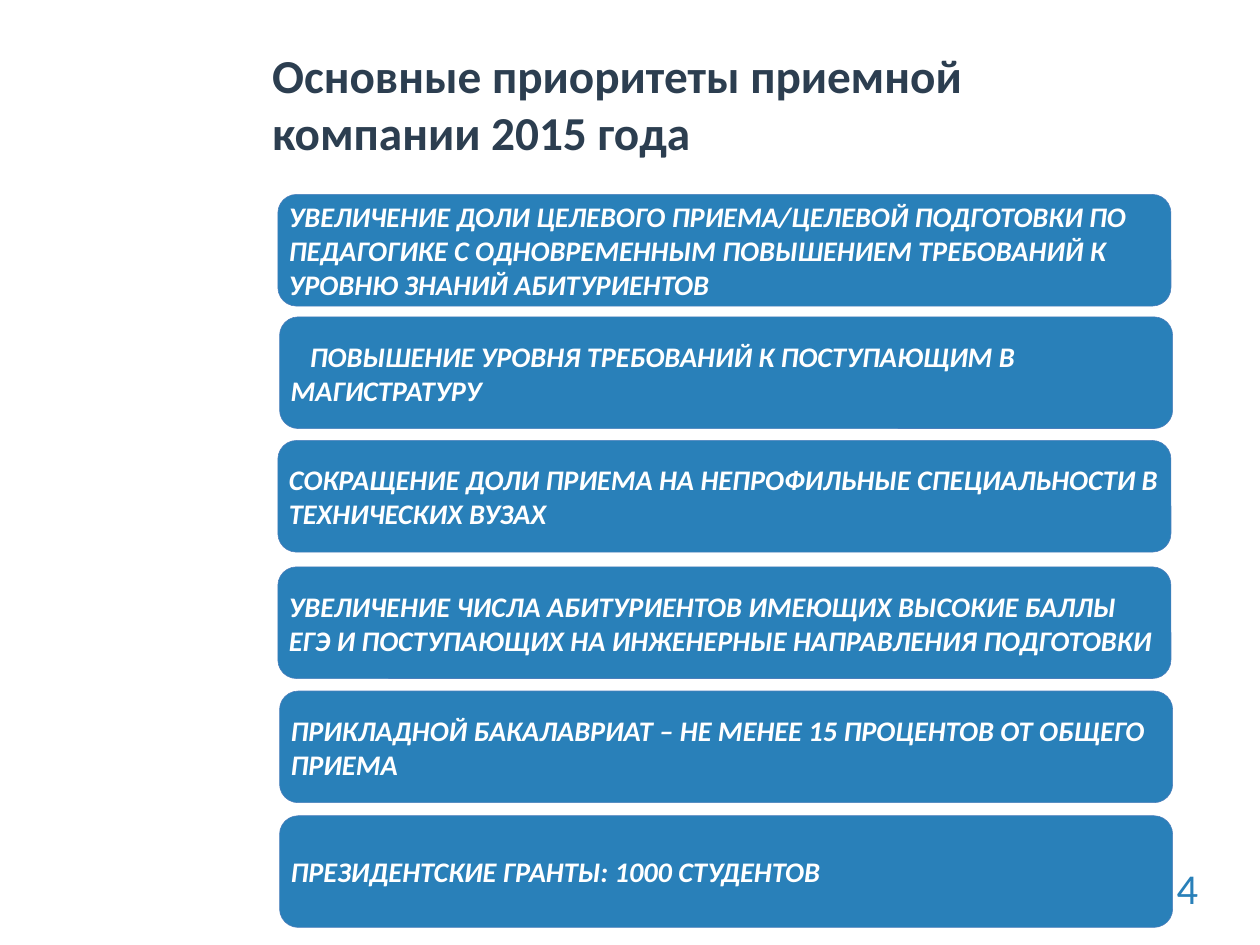
import pptx
import pptx.util
import pptx.dml.color
import pptx.enum.shapes
import pptx.enum.text

Inches = pptx.util.Inches
RGBColor = pptx.dml.color.RGBColor

BLUE = RGBColor(0x29, 0x80, 0xB9)
BORDER = RGBColor(0x4B, 0x7E, 0xBC)
NAVY = RGBColor(0x2C, 0x3E, 0x50)
WHITE = RGBColor(0xFF, 0xFF, 0xFF)

# left, top, first-line indent, wording
PRIORITIES = [
    (4.9, 3.43, 0, "УВЕЛИЧЕНИЕ ДОЛИ ЦЕЛЕВОГО ПРИЕМА/ЦЕЛЕВОЙ ПОДГОТОВКИ ПО ПЕДАГОГИКЕ "
                   "С ОДНОВРЕМЕННЫМ ПОВЫШЕНИЕМ ТРЕБОВАНИЙ К УРОВНЮ ЗНАНИЙ АБИТУРИЕНТОВ"),
    (4.93, 5.59, 0.34, "ПОВЫШЕНИЕ УРОВНЯ ТРЕБОВАНИЙ К ПОСТУПАЮЩИМ В МАГИСТРАТУРУ"),
    (4.9, 7.77, 0, "СОКРАЩЕНИЕ ДОЛИ ПРИЕМА НА НЕПРОФИЛЬНЫЕ СПЕЦИАЛЬНОСТИ В ТЕХНИЧЕСКИХ ВУЗАХ"),
    (4.9, 10, 0, "УВЕЛИЧЕНИЕ ЧИСЛА АБИТУРИЕНТОВ ИМЕЮЩИХ ВЫСОКИЕ БАЛЛЫ ЕГЭ "
                 "И ПОСТУПАЮЩИХ НА ИНЖЕНЕРНЫЕ НАПРАВЛЕНИЯ ПОДГОТОВКИ"),
    (4.93, 12.19, 0, "ПРИКЛАДНОЙ БАКАЛАВРИАТ – НЕ МЕНЕЕ 15 ПРОЦЕНТОВ ОТ ОБЩЕГО ПРИЕМА"),
    (4.93, 14.39, 0, "ПРЕЗИДЕНТСКИЕ ГРАНТЫ: 1000 СТУДЕНТОВ"),
]


def write_text(shape, text, size, color, bold=False, italic=False):
    """Put one left-aligned run into the shape and return its paragraph."""
    paragraph = shape.text_frame.paragraphs[0]
    paragraph.alignment = pptx.enum.text.PP_ALIGN.LEFT
    run = paragraph.add_run()
    run.text = text
    run.font.name = "Calibri"
    run.font.size = pptx.util.Pt(size)
    run.font.bold = bold
    run.font.italic = italic
    run.font.color.rgb = color
    return paragraph


presentation = pptx.Presentation()
presentation.slide_width = Inches(22.22)
presentation.slide_height = Inches(16.67)
slide = presentation.slides.add_slide(presentation.slide_layouts[6])

page_number = slide.shapes.add_textbox(Inches(20.65), Inches(15.16), Inches(0.59), Inches(1.01))
page_number.text_frame.word_wrap = False
write_text(page_number, "4", 54, BLUE)

title = slide.shapes.add_textbox(Inches(4.7), Inches(0.77), Inches(15.32), Inches(2.12))
title.text_frame.word_wrap = True
write_text(title, "Основные приоритеты приемной компании 2015 года", 60, NAVY, bold=True)

for left, top, indent, text in PRIORITIES:
    card = slide.shapes.add_shape(
        pptx.enum.shapes.MSO_SHAPE.ROUNDED_RECTANGLE,
        Inches(left), Inches(top), Inches(15.75), Inches(1.97))
    card.shadow.inherit = False
    card.fill.solid()
    card.fill.fore_color.rgb = BLUE
    card.line.color.rgb = BORDER
    card.line.width = pptx.util.Pt(0.75)
    card.text_frame.word_wrap = True
    card.text_frame.vertical_anchor = pptx.enum.text.MSO_ANCHOR.MIDDLE
    paragraph = write_text(card, text, 36, WHITE, bold=True, italic=True)
    if indent:
        properties = paragraph._p.get_or_add_pPr()
        properties.set("marL", "0")
        properties.set("indent", str(Inches(indent)))

presentation.save("out.pptx")
